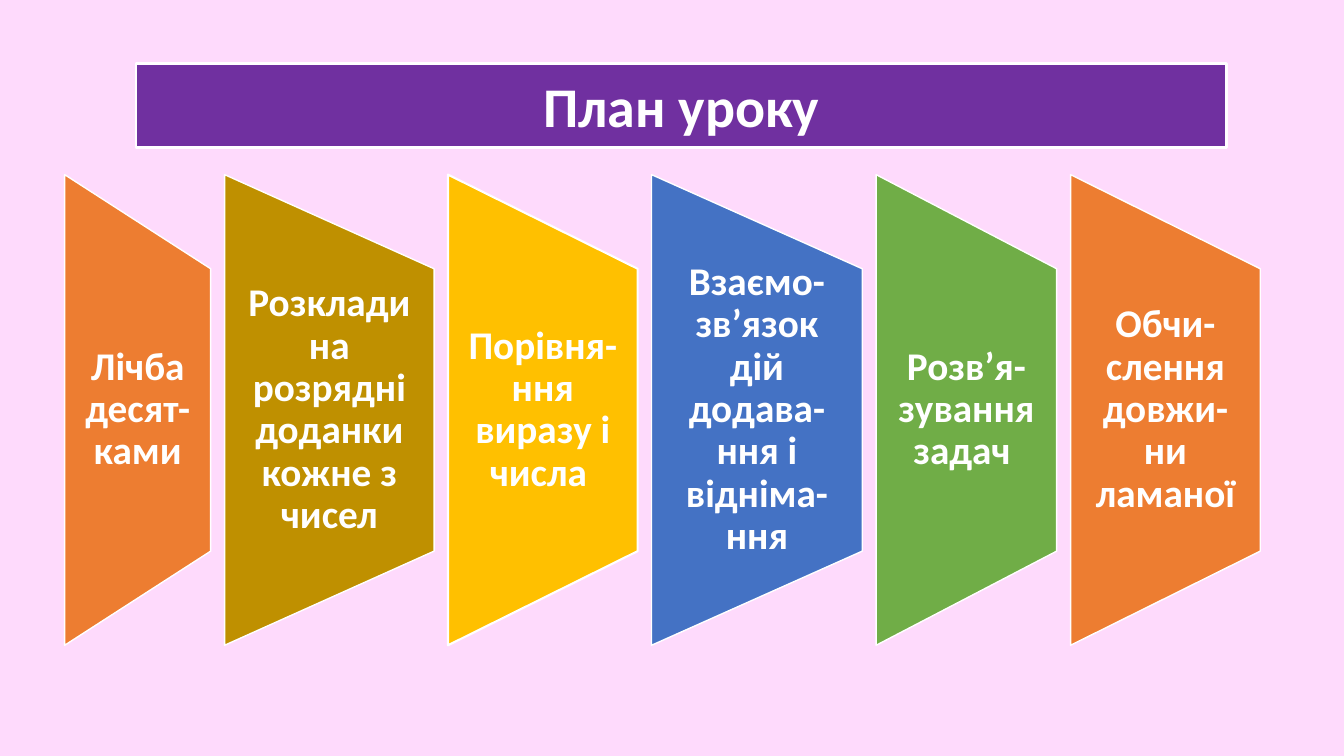
from dataclasses import dataclass

from pptx import Presentation
from pptx.dml.color import RGBColor
from pptx.enum import shapes, text
from pptx.shapes.base import BaseShape
from pptx.shapes.group import GroupShape
from pptx.slide import Slide
from pptx.text.text import TextFrame
from pptx.util import Cm, Pt


@dataclass(frozen=True)
class Theme:
    font: str = "Calibri"
    title_size: int = 40
    step_size: int = 28
    background: str = "FEDAFC"
    title_fill: str = "7030A0"
    white: str = "FFFFFF"
    orange: str = "ED7D31"
    ochre: str = "BF9000"
    yellow: str = "FFC000"
    blue: str = "4472C4"
    green: str = "70AD47"


@dataclass(frozen=True)
class Step:
    wording: str
    width: float
    fill: str
    line_width: float = 1


THEME = Theme()
STEPS = [
    Step("Лічба десят-ками", 3.68, THEME.orange),
    Step("Розклади на розрядні доданки кожне з чисел", 5.28, THEME.ochre),
    Step("Порівня-ння виразу і числа ", 4.78, THEME.yellow, 1.5),
    Step("Взаємо-зв’язок дій додава-ння і відніма-ння", 5.31, THEME.blue),
    Step("Розв’я-зування задач ", 4.55, THEME.green),
    Step("Обчи-слення довжи-ни ламаної", 4.78, THEME.orange),
]
FIRST_LEFT = 1.63
GAP = 0.35
MIDDLE = 10.33
PANEL_HEIGHT = 11.86
LABEL_HEIGHT = 7.11
LABEL_INSET = 0.48


def paint(shape: BaseShape, fill: str, line_width: float) -> None:
    shape.fill.solid()
    shape.fill.fore_color.rgb = RGBColor.from_string(fill)
    shape.line.color.rgb = RGBColor.from_string(THEME.white)
    shape.line.width = Pt(line_width)


def write(frame: TextFrame, wording: str, size: int, spacing: float) -> None:
    frame.word_wrap = True
    frame.vertical_anchor = text.MSO_ANCHOR.MIDDLE
    paragraph = frame.paragraphs[0]
    paragraph.alignment = text.PP_ALIGN.CENTER
    paragraph.line_spacing = spacing
    run = paragraph.add_run()
    run.text = wording
    run.font.name = THEME.font
    run.font.size = Pt(size)
    run.font.bold = True
    run.font.color.rgb = RGBColor.from_string(THEME.white)


def add_title(slide: Slide) -> None:
    title = slide.shapes.title
    title.left, title.top = Cm(3.43), Cm(1.68)
    title.width, title.height = Cm(27.48), Cm(1.96)
    paint(title, THEME.title_fill, 1.5)
    write(title.text_frame, "План уроку", THEME.title_size, 1.0)
    title.text_frame.auto_size = text.MSO_AUTO_SIZE.SHAPE_TO_FIT_TEXT


def add_step(group: GroupShape, step: Step, left: float) -> None:
    """Draw a panel turned on its side, with an upright label over it."""
    center = left + step.width / 2
    panel = group.shapes.add_shape(
        shapes.MSO_SHAPE.FLOWCHART_MANUAL_OPERATION,
        Cm(center - PANEL_HEIGHT / 2), Cm(MIDDLE - step.width / 2),
        Cm(PANEL_HEIGHT), Cm(step.width),
    )
    panel.rotation = 270
    panel.shadow.inherit = False
    paint(panel, step.fill, step.line_width)

    label = group.shapes.add_textbox(
        Cm(left), Cm(MIDDLE - LABEL_HEIGHT / 2), Cm(step.width), Cm(LABEL_HEIGHT)
    )
    frame = label.text_frame
    frame.margin_left = frame.margin_right = Cm(LABEL_INSET)
    frame.margin_top = frame.margin_bottom = 0
    write(frame, step.wording, THEME.step_size, 0.9)


def main() -> None:
    presentation = Presentation()
    presentation.slide_width, presentation.slide_height = Cm(33.87), Cm(19.05)
    slide = presentation.slides.add_slide(
        presentation.slide_layouts.get_by_name("Title Only")
    )
    slide.background.fill.solid()
    slide.background.fill.fore_color.rgb = RGBColor.from_string(THEME.background)
    add_title(slide)

    group = slide.shapes.add_group_shape()
    left = FIRST_LEFT
    for step in STEPS:
        add_step(group, step, left)
        left += step.width + GAP
    presentation.save("out.pptx")


if __name__ == "__main__":
    main()
